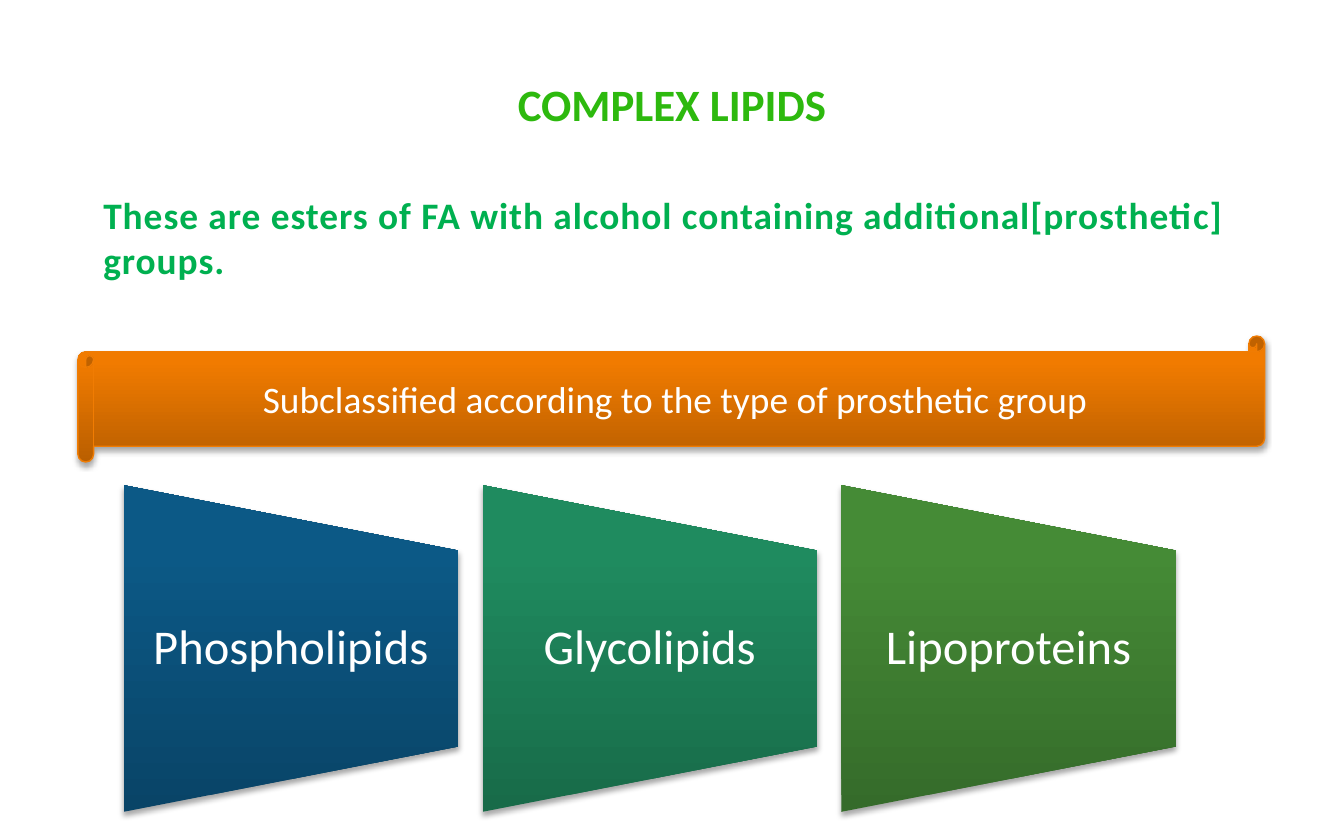
"""Build the complex lipids slide: a title, a definition, a banner and three classes."""
from pptx import Presentation, oxml, util as u
from pptx.dml.color import RGBColor
from pptx.enum import shapes, text
from pptx.oxml import ns

W, H = 10, 6.25
FONT = "Calibri"
COLORS = {"title": "2DB90E", "body": "00B050", "white": "FFFFFF", "banner line": "F07C03"}
GRADIENTS = {
    "banner": ("BA5F00", "F17B00", "F27C00"),
    "Phospholipids": ("094467", "0C5986", "0A5A89"),
    "Glycolipids": ("186B49", "1F8B5F", "1D8D60"),
    "Lipoproteins": ("356B2A", "458B36", "458D35"),
}
FIRST_X, PITCH = 0.95, 2.67


def inches(*box):
    """Convert a box in inches to lengths."""
    return [u.Inches(v) for v in box]


def write(sp, words, size, color, align=None, bold=False):
    """Put one formatted paragraph in a shape and return its run."""
    tf = sp.text_frame
    tf.word_wrap = True
    tf.text = words
    p = tf.paragraphs[0]
    p.alignment = align
    r = p.runs[0]
    r.font.name, r.font.size, r.font.bold = FONT, u.Pt(size), bold
    r.font.color.rgb = RGBColor.from_string(COLORS[color])
    return r


def shade(sp, colors):
    """Give a shape an upward gradient and a soft shadow below."""
    stops = "".join(
        f'<a:gs pos="{pos}"><a:srgbClr val="{c}"/></a:gs>'
        for pos, c in zip((0, 80000, 100000), colors))
    sp._element.spPr.append(oxml.parse_xml(
        f'<a:gradFill {ns.nsdecls("a")} rotWithShape="0"><a:gsLst>{stops}</a:gsLst>'
        '<a:lin ang="16200000" scaled="0"/></a:gradFill>'))
    sp.shadow.inherit = False
    effects = sp._element.spPr.find(ns.qn("a:effectLst"))
    effects.append(oxml.parse_xml(
        f'<a:outerShdw {ns.nsdecls("a")} blurRad="40000" dist="23000" dir="5400000" '
        'rotWithShape="0"><a:srgbClr val="000000"><a:alpha val="35000"/></a:srgbClr>'
        '</a:outerShdw>'))


def add_title(s, words):
    """Fill the title placeholder."""
    sp = s.shapes.title
    sp.left, sp.top, sp.width, sp.height = inches(0.05 * W, 0.04 * H, 0.9 * W, 1.04)
    sp.text_frame.vertical_anchor = text.MSO_ANCHOR.MIDDLE
    write(sp, words, 24, "title", text.PP_ALIGN.CENTER, True)


def add_definition(s, words):
    """Add the definition with slightly spaced letters."""
    sp = s.shapes.add_textbox(*inches(0.67, 1.38, 8.75, 0.77))
    r = write(sp, words, 20, "body", bold=True)
    r.font._element.set("spc", "50")


def add_banner(s, words):
    """Add the scroll banner."""
    sp = s.shapes.add_shape(shapes.MSO_SHAPE.HORIZONTAL_SCROLL,
                            *inches(0.58, 0.4 * H, 8.83, 0.15 * H))
    shade(sp, GRADIENTS["banner"])
    sp.line.color.rgb = RGBColor.from_string(COLORS["banner line"])
    sp.line.width = u.Pt(0.75)
    sp.text_frame.vertical_anchor = text.MSO_ANCHOR.MIDDLE
    write(sp, words, 20, "white", text.PP_ALIGN.CENTER)


def add_class(s, column, name):
    """Add one lipid class: a sideways trapezoid with an upright label."""
    x = FIRST_X + column * PITCH
    sp = s.shapes.add_shape(shapes.MSO_SHAPE.FLOWCHART_MANUAL_OPERATION,
                            *inches(x, 3.58, 2.43, 2.49))
    sp.rotation = 270
    shade(sp, GRADIENTS[name])
    sp.line.fill.background()
    label = s.shapes.add_textbox(*inches(x - 0.03, 4.1, 2.49, 1.46))
    tf = label.text_frame
    tf.margin_left = tf.margin_right = u.Inches(0.18)
    tf.margin_top = tf.margin_bottom = 0
    tf.vertical_anchor = text.MSO_ANCHOR.MIDDLE
    write(label, name, 26, "white", text.PP_ALIGN.CENTER)
    tf.paragraphs[0].line_spacing = 0.9


def main():
    """Build and save the slide."""
    prs = Presentation()
    prs.slide_width, prs.slide_height = inches(W, H)
    s = prs.slides.add_slide(prs.slide_layouts[5])
    add_title(s, "COMPLEX LIPIDS")
    add_definition(s, "These are esters of FA with alcohol containing "
                      "additional[prosthetic] groups.")
    add_banner(s, "Subclassified according to the type of prosthetic group")
    for column, name in enumerate(("Phospholipids", "Glycolipids", "Lipoproteins")):
        add_class(s, column, name)
    prs.save("out.pptx")


if __name__ == "__main__":
    main()
